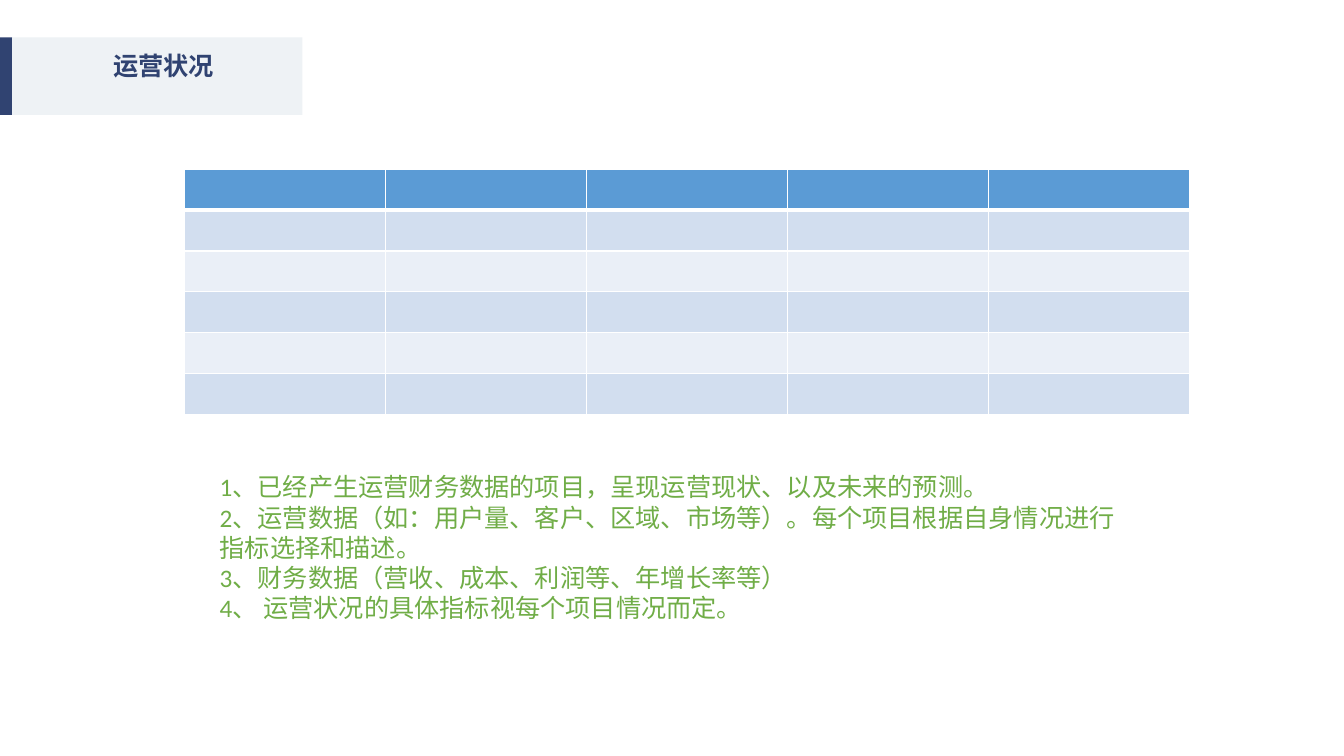
from dataclasses import dataclass

from lxml import etree
from pptx import Presentation
from pptx.dml.color import RGBColor
from pptx.enum.shapes import MSO_SHAPE
from pptx.enum.text import PP_ALIGN
from pptx.oxml.ns import qn
from pptx.util import Inches, Pt

RECTANGLE = MSO_SHAPE.RECTANGLE
LEFT, CENTER = PP_ALIGN.LEFT, PP_ALIGN.CENTER


@dataclass(frozen=True)
class Theme:
    navy: str = "304371"
    pale: str = "EEF2F5"
    green: str = "70AD47"
    header: str = "5B9BD5"
    bands: tuple = ("D2DEEF", "EAEFF7")
    border: str = "FFFFFF"
    thin: float = 1
    thick: float = 3
    text_size: int = 18
    latin: str = "Calibri"
    chinese: str = "Noto Sans CJK SC"


THEME = Theme()
ROWS, COLUMNS = 6, 5

NOTES = [
    "1、已经产生运营财务数据的项目，呈现运营现状、以及未来的预测。",
    "2、运营数据（如：用户量、客户、区域、市场等）。每个项目根据自身情况进行指标选择和描述。",
    "3、财务数据（营收、成本、利润等、年增长率等）",
    "4、 运营状况的具体指标视每个项目情况而定。",
]


def add_bar(slide, left, top, width, height, color):
    shape = slide.shapes.add_shape(
        RECTANGLE, Inches(left), Inches(top), Inches(width), Inches(height))
    shape.shadow.inherit = False
    shape.fill.solid()
    shape.fill.fore_color.rgb = RGBColor.from_string(color)
    shape.line.fill.background()


def add_text(slide, left, top, width, height, lines, color, font_name,
             alignment=LEFT, bold=False):
    box = slide.shapes.add_textbox(
        Inches(left), Inches(top), Inches(width), Inches(height))
    frame = box.text_frame
    frame.word_wrap = True
    frame.text = "\n".join(lines)
    font_format = {"name": font_name, "size": Pt(THEME.text_size), "bold": bold}
    for paragraph in frame.paragraphs:
        paragraph.alignment = alignment
        font = paragraph.runs[0].font
        for attribute, value in font_format.items():
            setattr(font, attribute, value)
        font.color.rgb = RGBColor.from_string(color)
        # East Asian typeface for the Chinese characters
        properties = paragraph.runs[0]._r.get_or_add_rPr()
        etree.SubElement(properties, qn("a:ea"), typeface=THEME.chinese)


def set_borders(cell, widths):
    properties = cell._tc.get_or_add_tcPr()
    for side, width in widths.items():
        line = etree.SubElement(properties, qn(f"a:ln{side}"), w=str(Pt(width)))
        fill = etree.SubElement(line, qn("a:solidFill"))
        etree.SubElement(fill, qn("a:srgbClr"), val=THEME.border)


def add_banded_table(slide, left, top, width, height):
    table = slide.shapes.add_table(
        ROWS, COLUMNS, Inches(left), Inches(top), Inches(width), Inches(height)).table
    for row in range(ROWS):
        color = THEME.header if row == 0 else THEME.bands[(row - 1) % 2]
        widths = {
            "L": THEME.thin,
            "R": THEME.thin,
            "T": THEME.thick if row == 1 else THEME.thin,
            "B": THEME.thick if row == 0 else THEME.thin,
        }
        for column in range(COLUMNS):
            cell = table.cell(row, column)
            set_borders(cell, widths)
            cell.fill.solid()
            cell.fill.fore_color.rgb = RGBColor.from_string(color)


def main():
    presentation = Presentation()
    presentation.slide_width = Inches(13.33)
    presentation.slide_height = Inches(7.5)
    slide = presentation.slides.add_slide(presentation.slide_layouts[6])

    # Title band
    add_bar(slide, 0, 0.37, 0.12, 0.77, THEME.navy)
    add_bar(slide, 0.12, 0.37, 2.88, 0.77, THEME.pale)
    add_text(slide, 0.71, 0.45, 1.83, 0.4, ["运营状况"], THEME.navy,
             THEME.chinese, alignment=CENTER, bold=True)

    # Guidance notes
    add_text(slide, 2.08, 4.63, 9.08, 1.62, NOTES, THEME.green, THEME.latin)

    # Empty data table
    add_banded_table(slide, 1.83, 1.68, 9.97, 2.43)

    presentation.save("out.pptx")


if __name__ == "__main__":
    main()
